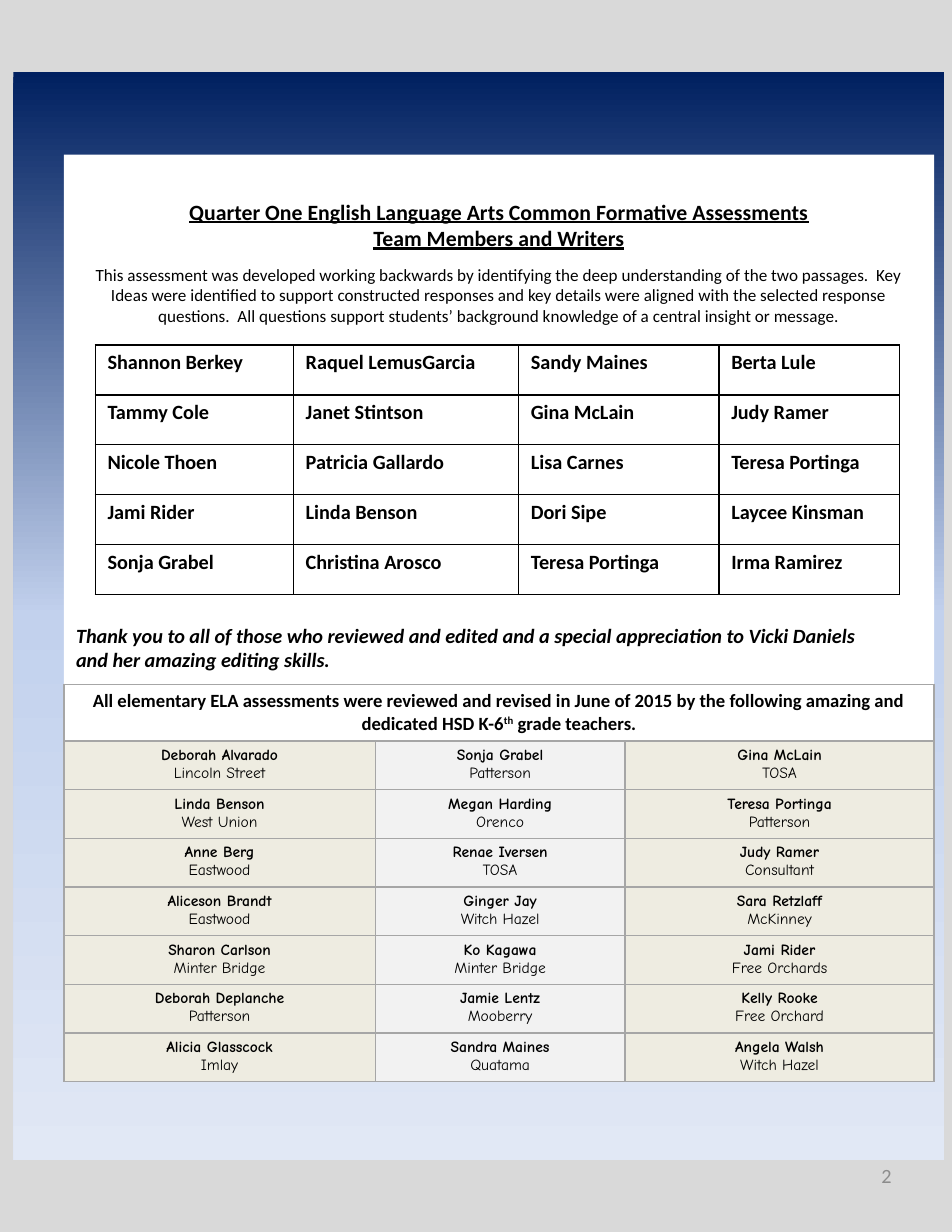
from collections import namedtuple
from dataclasses import dataclass

from lxml.etree import SubElement
from pptx import Presentation
from pptx.dml.color import RGBColor
from pptx.enum.shapes import MSO_SHAPE as Preset
from pptx.enum.text import MSO_ANCHOR as Anchor, MSO_AUTO_SIZE as AutoSize, PP_ALIGN as Align
from pptx.oxml.ns import qn
from pptx.util import Inches, Pt

COLUMNS, ROWS = 850, 1100
WIDTH, HEIGHT = Inches(8.5), Inches(11)
Box = namedtuple("Box", "left top width height")


@dataclass(frozen=True)
class Theme:
    font: str = "Calibri"
    roster_font: str = "Comic Neue"
    ink: str = "000000"
    paper: str = "FFFFFF"
    frame: str = "D9D9D9"
    backdrop: tuple = ((0, "002060"), (50, "C2D1ED"), (100, "E1E8F5"))
    page_number: str = "8C8C8C"
    roster_line: str = "A6A6A6"
    roster_bands: tuple = ("EEECE1", "F2F2F2", "EEECE1")
    heading: int = 14
    body: int = 13
    banner: int = 12
    intro: int = 11
    roster: int = 10


THEME = Theme()

HEADING = ("Quarter One English Language Arts Common Formative Assessments",
           "Team Members and Writers")
INTRO = ("This assessment was developed working backwards by identifying the deep understanding "
         "of the two passages.  Key Ideas were identified to support constructed responses and key "
         "details were aligned with the selected response questions.  All questions support "
         "students’ background knowledge of a central insight or message.")
THANKS = ("Thank you to all of those who reviewed and edited and a special appreciation to Vicki Daniels",
          "and her amazing editing skills.")
WRITERS = (
    ("Shannon Berkey", "Raquel LemusGarcia", "Sandy Maines", "Berta Lule"),
    ("Tammy Cole", "Janet Stintson", "Gina McLain", "Judy Ramer"),
    ("Nicole Thoen", "Patricia Gallardo", "Lisa Carnes", "Teresa Portinga"),
    ("Jami Rider", "Linda Benson", "Dori Sipe", "Laycee Kinsman"),
    ("Sonja Grabel", "Christina Arosco", "Teresa Portinga", "Irma Ramirez"),
)
BANNER = ("All elementary ELA assessments were reviewed and revised in June of 2015 by the "
          "following amazing and dedicated HSD K-6", "th", " grade teachers.")
REVIEWERS = (
    (("Deborah Alvarado", "Lincoln Street"), ("Sonja Grabel", "Patterson"), ("Gina McLain", "TOSA")),
    (("Linda Benson", "West Union"), ("Megan Harding", "Orenco"), ("Teresa Portinga", "Patterson")),
    (("Anne Berg", "Eastwood"), ("Renae Iversen", "TOSA"), ("Judy Ramer", "Consultant")),
    (("Aliceson Brandt", "Eastwood"), ("Ginger Jay", "Witch Hazel"), ("Sara Retzlaff", "McKinney")),
    (("Sharon Carlson", "Minter Bridge"), ("Ko Kagawa", "Minter Bridge"), ("Jami Rider", "Free Orchards")),
    (("Deborah Deplanche", "Patterson"), ("Jamie Lentz", "Mooberry"), ("Kelly Rooke", "Free Orchard")),
    (("Alicia Glasscock", "Imlay"), ("Sandra Maines", "Quatama"), ("Angela Walsh", "Witch Hazel")),
)


def across(columns):
    return round(WIDTH * columns / COLUMNS)


def down(rows):
    return round(HEIGHT * rows / ROWS)


def emu(box):
    return across(box.left), down(box.top), across(box.width), down(box.height)


def assign(target, **values):
    for name, value in values.items():
        setattr(target, name, value)


def set_margins(target, side=11, top=5, bottom=5):
    assign(target, margin_left=across(side), margin_right=across(side),
           margin_top=down(top), margin_bottom=down(bottom))


def paint(fill, color):
    fill.solid()
    fill.fore_color.rgb = RGBColor.from_string(color)


def add_run(paragraph, text, size, font=THEME.font, color=THEME.ink, **style):
    run = paragraph.add_run()
    run.text = text
    assign(run.font, name=font, size=Pt(size), **style)
    run.font.color.rgb = RGBColor.from_string(color)
    return run


def write_lines(frame, lines, align):
    for index, (text, style) in enumerate(lines):
        paragraph = frame.add_paragraph() if index else frame.paragraphs[0]
        paragraph.alignment = align
        add_run(paragraph, text, **style)


def add_panel(slide, box, color):
    panel = slide.shapes.add_shape(Preset.RECTANGLE, *emu(box))
    panel.shadow.inherit = False
    panel.line.fill.background()
    paint(panel.fill, color)
    return panel


def add_backdrop(slide, box):
    add_panel(slide, box, THEME.frame)
    sky = add_panel(slide, Box(box.left + 12, box.top + 64, box.width - 19, box.height - 128), THEME.paper)
    sky.fill.gradient()
    sky.fill.gradient_angle = 270
    stops = next(sky.element.iter(qn("a:gsLst")))
    stops.clear()
    for percent, color in THEME.backdrop:
        stop = SubElement(stops, qn("a:gs"), pos=str(percent * 1000))
        SubElement(stop, qn("a:srgbClr"), val=color)


def add_page_number(slide, box):
    frame = slide.shapes.add_textbox(*emu(box)).text_frame
    assign(frame, word_wrap=True, vertical_anchor=Anchor.MIDDLE)
    set_margins(frame, top=6, bottom=6)
    write_lines(frame, [("2", dict(size=THEME.body, color=THEME.page_number))], Align.RIGHT)


def add_message(slide, box):
    frame = add_panel(slide, box, THEME.paper).text_frame
    assign(frame, word_wrap=True, vertical_anchor=Anchor.TOP)
    set_margins(frame, top=98)
    thanks_style = dict(size=THEME.body, bold=True, italic=True)
    write_lines(frame, [(INTRO, dict(size=THEME.intro))] + [(line, thanks_style) for line in THANKS], Align.LEFT)
    intro, thanks = frame.paragraphs[:2]
    intro.alignment = Align.CENTER
    thanks.space_before = Pt(191)


def place_heading(slide, box):
    title = slide.shapes.title
    assign(title, **dict(zip(Box._fields, emu(Box(box.left, box.top + 34, box.width, 57)))))
    title.element.getparent().append(title.element)
    frame = title.text_frame
    assign(frame, word_wrap=True, auto_size=AutoSize.NONE, vertical_anchor=Anchor.TOP)
    set_margins(frame)
    style = dict(size=THEME.heading, bold=True, underline=True)
    write_lines(frame, [(line, style) for line in HEADING], Align.CENTER)


def add_grid(slide, box, widths, heights):
    table = slide.shapes.add_table(len(heights), len(widths), *emu(box)).table
    assign(table, first_row=False, horz_banding=False)
    for column, width in zip(table.columns, widths):
        column.width = across(width)
    for row, height in zip(table.rows, heights):
        row.height = down(height)
    return table


def format_cell(cell, fill, line):
    paint(cell.fill, fill)
    properties = cell._tc.get_or_add_tcPr()
    for index, side in enumerate(("lnL", "lnR", "lnT", "lnB")):
        border = SubElement(properties, qn(f"a:{side}"), w=str(Pt(1)))
        SubElement(SubElement(border, qn("a:solidFill")), qn("a:srgbClr"), val=line)
        properties.insert(index, border)


def add_writers(slide, box):
    count = len(WRITERS)
    table = add_grid(slide, box, (177, 201, 179, 161), [box.height / count] * count)
    for r, team in enumerate(WRITERS):
        for c, writer in enumerate(team):
            cell = table.cell(r, c)
            format_cell(cell, THEME.paper, THEME.ink)
            set_margins(cell)
            write_lines(cell.text_frame, [(writer, dict(size=THEME.body, bold=True))], Align.LEFT)


def add_reviewers(slide, box):
    banner_height, count = 50, len(REVIEWERS)
    heights = [banner_height] + [(box.height - banner_height) / count] * count
    table = add_grid(slide, box, (278, 223, 276), heights)
    for cell in table.rows[0].cells:
        format_cell(cell, THEME.paper, THEME.roster_line)
    banner = table.cell(0, 0)
    banner.merge(table.cell(0, 2))
    sentence = banner.text_frame.paragraphs[0]
    sentence.alignment = Align.CENTER
    _, ordinal, _ = [add_run(sentence, part, THEME.banner, bold=True) for part in BANNER]
    ordinal._r.get_or_add_rPr().set("baseline", "30000")
    style = dict(size=THEME.roster, font=THEME.roster_font)
    for r, group in enumerate(REVIEWERS, 1):
        for c, (teacher, school) in enumerate(group):
            cell = table.cell(r, c)
            format_cell(cell, THEME.roster_bands[c], THEME.roster_line)
            write_lines(cell.text_frame, [(teacher, dict(style, bold=True)),
                                          (school, dict(style, bold=False))], Align.CENTER)


def main():
    deck = Presentation()
    assign(deck, slide_width=WIDTH, slide_height=HEIGHT)
    slide = deck.slides.add_slide(deck.slide_layouts[5])
    message = Box(57, 138, 777, 473)
    add_backdrop(slide, Box(0, 0, COLUMNS, ROWS))
    add_page_number(slide, Box(609, 1020, 198, 59))
    add_message(slide, message)
    place_heading(slide, message)
    add_writers(slide, Box(message.left + 28, message.top + 170, 718, 223))
    add_reviewers(slide, Box(message.left, message.top + message.height, message.width, 354))
    deck.save("out.pptx")


if __name__ == "__main__":
    main()
